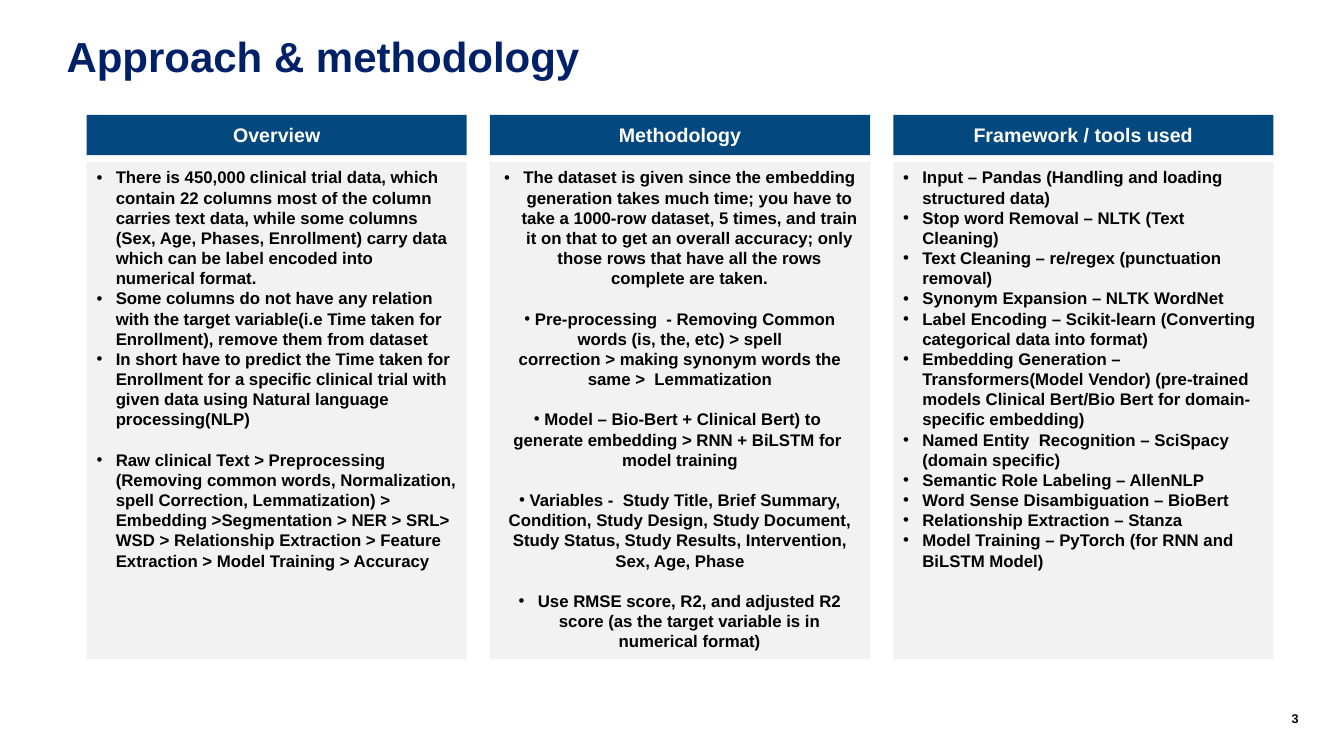
from pptx import Presentation
from pptx.dml.color import RGBColor
from pptx.enum.shapes import MSO_SHAPE
from pptx.enum.text import MSO_ANCHOR, PP_ALIGN
from pptx.oxml import parse_xml
from pptx.oxml.ns import nsdecls
from pptx.util import Inches, Pt

NAVY = RGBColor(0x00, 0x20, 0x68)
BLUE = RGBColor(0x03, 0x48, 0x7F)
GREY = RGBColor(0xF2, 0xF2, 0xF2)
WHITE = RGBColor(0xFF, 0xFF, 0xFF)
BLACK = RGBColor(0x00, 0x00, 0x00)

COLUMN_LEFT, COLUMN_TOP, COLUMN_PITCH = 0.86, 1.14, 4.0
COLUMN_WIDTH, COLUMN_HEIGHT = 3.77, 5.4
HEADING_HEIGHT, HEADING_GAP = 0.4, 0.07
HANGING = 0.19
LINE_GAP = Pt(14.4)

# Each bullet: text, hanging indent in inches, whether a gap comes before it
OVERVIEW = [
    ("There is 450,000 clinical trial data, which contain 22 columns most of the "
     "column carries text data, while some columns (Sex, Age, Phases, Enrollment) "
     "carry data which can be label encoded into numerical format.", HANGING, False),
    ("Some columns do not have any relation with the target variable(i.e Time taken "
     "for Enrollment), remove them from dataset", HANGING, False),
    ("In short have to predict the Time taken for Enrollment for a specific clinical "
     "trial with given data using Natural language processing(NLP)", HANGING, False),
    ("Raw clinical Text > Preprocessing (Removing common words, Normalization, spell "
     "Correction, Lemmatization) > Embedding >Segmentation > NER > SRL> WSD > "
     "Relationship Extraction > Feature Extraction > Model Training > Accuracy",
     HANGING, True),
]
METHODOLOGY = [
    ("The dataset is given since the embedding generation takes much time; you have "
     "to take a 1000-row dataset, 5 times, and train it on that to get an overall "
     "accuracy; only those rows that have all the rows complete are taken.",
     HANGING, False),
    (" Pre-processing  - Removing Common\vwords (is, the, etc) > spell\v"
     "correction > making synonym words the same >  Lemmatization", 0, True),
    (" Model – Bio-Bert + Clinical Bert) to  generate embedding > RNN + BiLSTM for  "
     "model training", 0, True),
    (" Variables -  Study Title, Brief Summary, Condition, Study Design, Study "
     "Document, Study Status, Study Results, Intervention, Sex, Age, Phase", 0, True),
    ("Use RMSE score, R2, and adjusted R2 score (as the target variable is in "
     "numerical format)", HANGING, True),
]
TOOLS = [(tool, HANGING, False) for tool in (
    "Input – Pandas (Handling and loading structured data)",
    "Stop word Removal – NLTK (Text Cleaning)",
    "Text Cleaning – re/regex (punctuation removal)",
    "Synonym Expansion – NLTK WordNet",
    "Label Encoding – Scikit-learn (Converting categorical data into format)",
    "Embedding Generation – Transformers(Model Vendor) (pre-trained models Clinical "
    "Bert/Bio Bert for domain-specific embedding)",
    "Named Entity  Recognition – SciSpacy (domain specific)",
    "Semantic Role Labeling – AllenNLP",
    "Word Sense Disambiguation – BioBert",
    "Relationship Extraction – Stanza",
    "Model Training – PyTorch (for RNN and BiLSTM Model)",
)]
COLUMNS = [
    ("Overview", OVERVIEW, PP_ALIGN.LEFT),
    ("Methodology", METHODOLOGY, PP_ALIGN.CENTER),
    ("Framework / tools used", TOOLS, PP_ALIGN.LEFT),
]


def write(paragraph, text, size, color, **layout):
    """Fill a paragraph with bold text; layout holds paragraph attributes."""
    paragraph.text = text
    for name, value in layout.items():
        setattr(paragraph, name, value)
    font_format = {"name": "Arial", "size": Pt(size), "bold": True}
    for run in paragraph.runs:
        for name, value in font_format.items():
            setattr(run.font, name, value)
        run.font.color.rgb = color


def add_label(slide, box, text, size, color, **layout):
    """Place a single line of text without insets."""
    frame = slide.shapes.add_textbox(*map(Inches, box)).text_frame
    frame.word_wrap = True
    for side in ("left", "top", "right", "bottom"):
        setattr(frame, f"margin_{side}", 0)
    write(frame.paragraphs[0], text, size, color, **layout)


def add_panel(slide, box, fill, anchor):
    """Draw a plain filled rectangle and return its text frame."""
    panel = slide.shapes.add_shape(MSO_SHAPE.RECTANGLE, *map(Inches, box))
    panel.shadow.inherit = False
    panel.fill.solid()
    panel.fill.fore_color.rgb = fill
    panel.line.fill.background()
    panel.text_frame.word_wrap = True
    panel.text_frame.vertical_anchor = anchor
    return panel.text_frame


def add_bullet(paragraph, hanging):
    properties = paragraph._p.get_or_add_pPr()
    properties.set("marL", str(Inches(hanging)))
    properties.set("indent", str(Inches(-hanging)))
    properties.append(parse_xml(f'<a:buFont {nsdecls("a")} typeface="Arial"/>'))
    properties.append(parse_xml(f'<a:buChar {nsdecls("a")} char="•"/>'))


def add_column(slide, box, heading, bullets, alignment):
    left, top, width, height = box
    title = add_panel(slide, (left, top, width, HEADING_HEIGHT), BLUE, MSO_ANCHOR.MIDDLE)
    write(title.paragraphs[0], heading, 14, WHITE, alignment=PP_ALIGN.CENTER)

    offset = HEADING_HEIGHT + HEADING_GAP
    body = add_panel(slide, (left, top + offset, width, height - offset), GREY, MSO_ANCHOR.TOP)
    for index, (text, hanging, gap) in enumerate(bullets):
        paragraph = body.add_paragraph() if index else body.paragraphs[0]
        add_bullet(paragraph, hanging)
        write(paragraph, text, 12, BLACK, alignment=alignment,
              space_before=LINE_GAP if gap else Pt(0))


def main():
    presentation = Presentation()
    presentation.slide_width = Inches(13.33)
    presentation.slide_height = Inches(7.5)
    slide = presentation.slides.add_slide(presentation.slide_layouts[6])

    add_label(slide, (0.66, 0.34, 9.62, 0.51), "Approach & methodology", 30, NAVY,
              line_spacing=0.95)
    for index, column in enumerate(COLUMNS):
        left = COLUMN_LEFT + index * COLUMN_PITCH
        add_column(slide, (left, COLUMN_TOP, COLUMN_WIDTH, COLUMN_HEIGHT), *column)
    add_label(slide, (12.37, 7.05, 0.51, 0.2), "3", 9, BLACK, alignment=PP_ALIGN.RIGHT)

    presentation.save("out.pptx")


if __name__ == "__main__":
    main()
